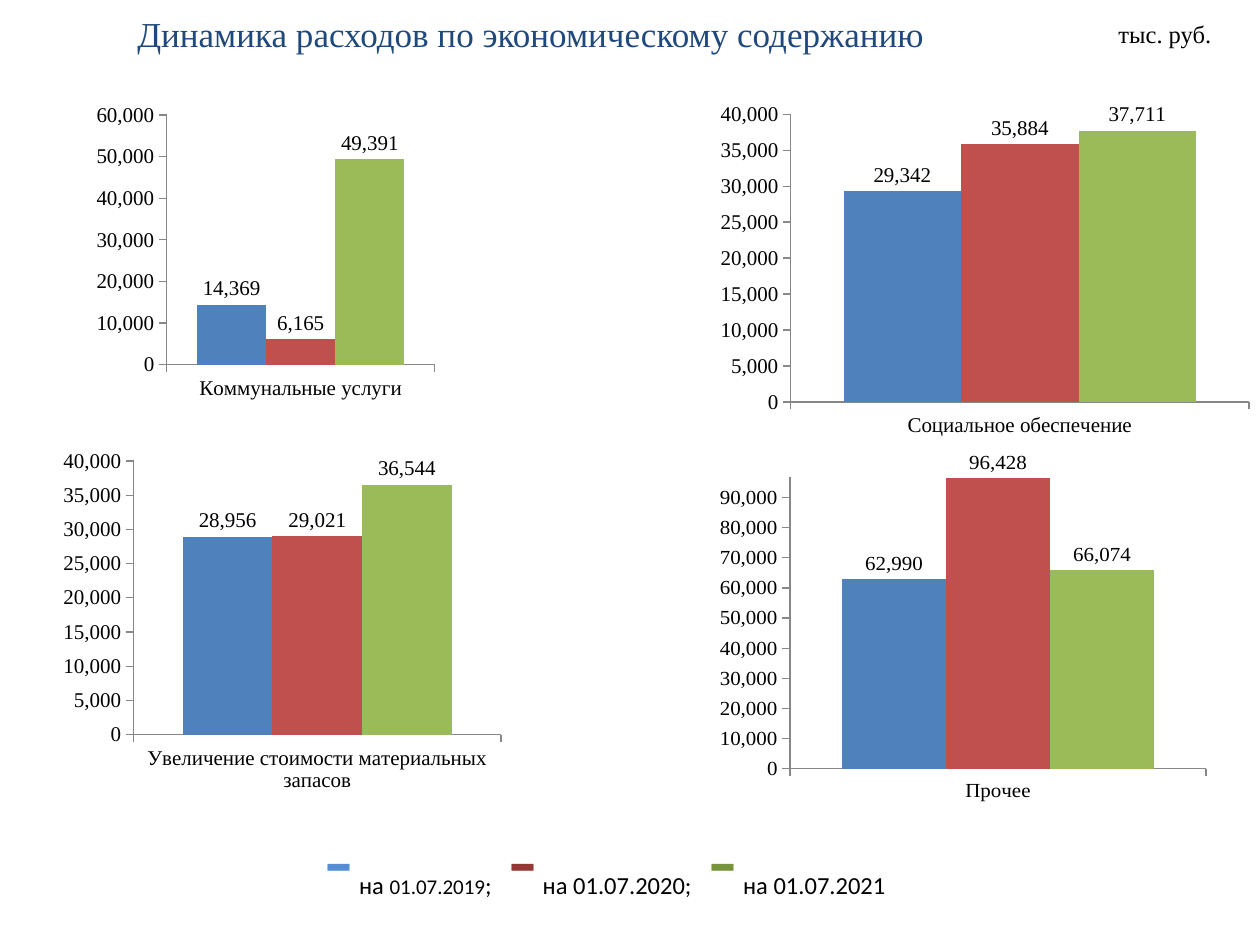
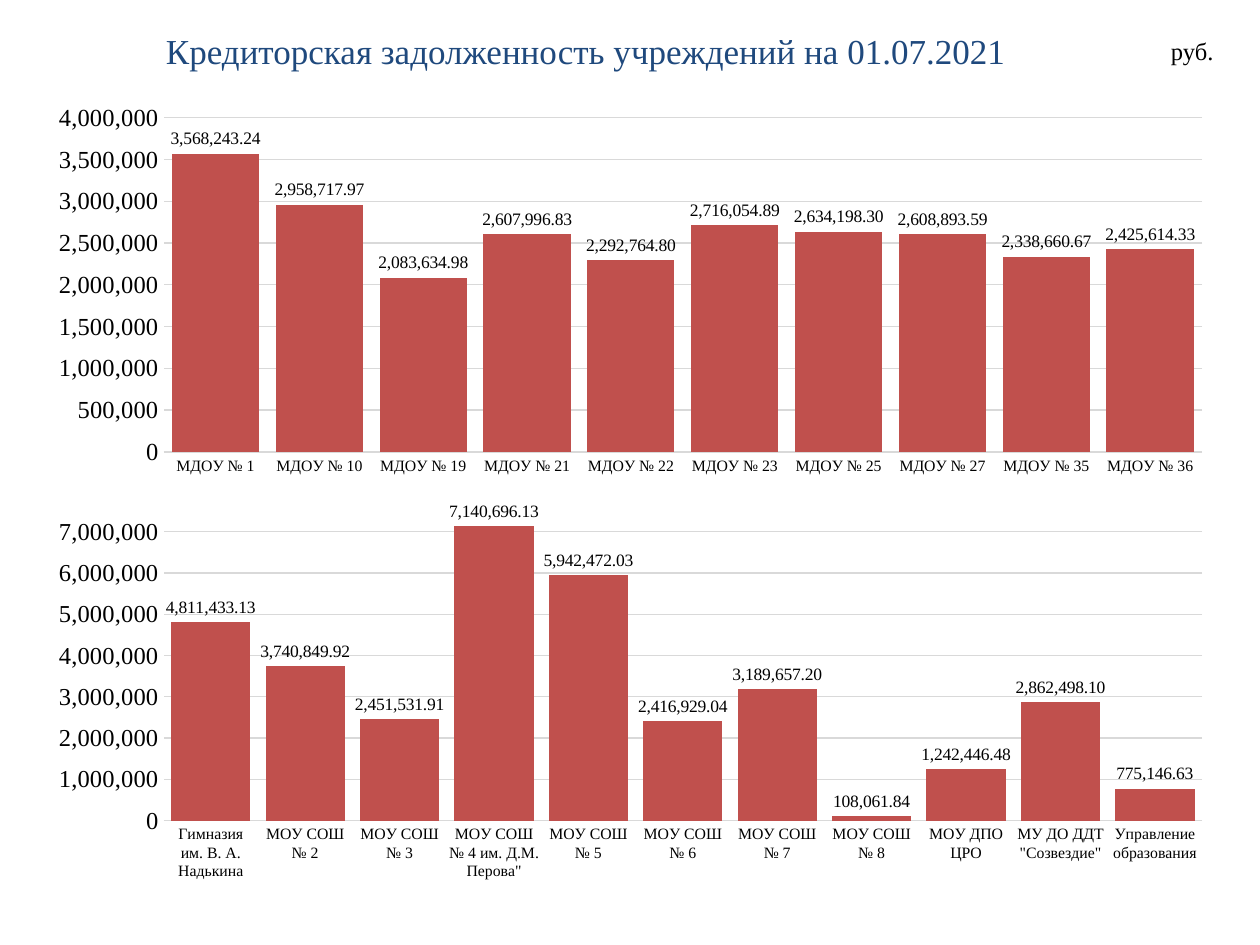
from dataclasses import dataclass
from lxml.etree import SubElement
from pptx import Presentation
from pptx.chart.data import CategoryChartData
from pptx.dml.color import RGBColor
from pptx.enum.chart import XL_CHART_TYPE, XL_LABEL_POSITION, XL_TICK_MARK
from pptx.enum.text import PP_ALIGN
from pptx.oxml.ns import qn
from pptx.util import Pt


@dataclass(frozen=True)
class Theme:
    """Colours, fonts and type sizes shared by the slides."""
    serif: str = "Times New Roman"
    sans: str = "Calibri"
    title: str = "1F497D"
    text: str = "000000"
    axis: str = "878787"
    grid: str = "D9D9D9"
    bars: tuple = ("4F81BD", "C0504D", "9BBB59")
    keys: tuple = ("558ED5", "953735", "77933C")
    title_size: float = 20
    unit_size: float = 14
    key_size: float = 54


@dataclass(frozen=True)
class ChartStyle:
    """Look of one family of column charts."""
    category_size: float
    value_size: float
    label_size: float
    label_format: str
    axis_color: str
    tick: XL_TICK_MARK
    overlap: int
    gridlines: bool


THEME = Theme()
COMPARISON = ChartStyle(12, 12, 12, "#,##0", THEME.axis, XL_TICK_MARK.OUTSIDE, 0, False)
RANKING = ChartStyle(9, 14, 10, "#,##0.00", THEME.grid, XL_TICK_MARK.NONE, -27, True)

DATES = ("на 01.07.2019", "на 01.07.2020", "на 01.07.2021")
EXPENSES = (
    ("Коммунальные услуги", (14369, 6165, 49391), (38, 54.5, 329, 181.5),
     (0.174, 0.062, 0.466, 0.786), 88, 60000, 10000),
    ("Социальное обеспечение", (29342, 35884, 37711), (405.5, 55, 314.5, 198.5),
     None, 90, 40000, 5000),
    ("Увеличение стоимости материальных запасов", (28956, 29021, 36544), (31, 253, 260.5, 203.5),
     None, 110, 40000, 5000),
    ("Прочее", (62990, 96428, 66074), (405.5, 258.5, 289.5, 203.5),
     None, 100, 97000, 10000),
)
KINDERGARTENS = {
    "МДОУ № 1": 3568243.24, "МДОУ № 10": 2958717.97, "МДОУ № 19": 2083634.98,
    "МДОУ № 21": 2607996.83, "МДОУ № 22": 2292764.80, "МДОУ № 23": 2716054.89,
    "МДОУ № 25": 2634198.30, "МДОУ № 27": 2608893.59, "МДОУ № 35": 2338660.67,
    "МДОУ № 36": 2425614.33,
}
SCHOOLS = {
    "Гимназия им. В. А. Надькина": 4811433.13, "МОУ СОШ № 2": 3740849.92,
    "МОУ СОШ № 3": 2451531.91, 'МОУ СОШ № 4 им. Д.М. Перова"': 7140696.13,
    "МОУ СОШ № 5": 5942472.03, "МОУ СОШ № 6": 2416929.04, "МОУ СОШ № 7": 3189657.20,
    "МОУ СОШ № 8": 108061.84, "МОУ ДПО ЦРО": 1242446.48,
    'МУ ДО ДДТ "Созвездие"': 2862498.10, "Управление образования": 775146.63,
}
DEBTS = (
    (KINDERGARTENS, 55, 4000000, 500000),
    (SCHOOLS, 286.5, 7500000, 1000000),
)


def set_font(font, size, color=THEME.text, name=THEME.serif):
    """Apply size, colour and typeface to a font."""
    font.size = Pt(size)
    font.name = name
    font.color.rgb = RGBColor.from_string(color)


def add_box(page, bounds):
    """Add a wrapping text box within the given bounds."""
    box = page.shapes.add_textbox(*map(Pt, bounds))
    box.text_frame.word_wrap = True
    return box


def add_caption(page, bounds, text, size, color, align):
    """Add a one-paragraph caption."""
    para = add_box(page, bounds).text_frame.paragraphs[0]
    para.text = text
    para.alignment = align
    set_font(para.runs[0].font, size, color)


def add_heading(page, title, title_bounds, unit, unit_bounds):
    """Add the slide title and the unit of measure."""
    add_caption(page, title_bounds, title, THEME.title_size, THEME.title, PP_ALIGN.CENTER)
    add_caption(page, unit_bounds, unit, THEME.unit_size, THEME.text, PP_ALIGN.LEFT)


def place_plot(chart, fractions):
    """Fix the inner plot area as fractions of the chart box."""
    plot_area = chart.plots[0]._element.getparent()
    layout = plot_area.find(qn("c:layout"))
    if layout is None:
        layout = SubElement(plot_area, qn("c:layout"))
        plot_area.insert(0, layout)
    manual = SubElement(layout, qn("c:manualLayout"))
    settings = [("layoutTarget", "inner"), ("xMode", "edge"), ("yMode", "edge")]
    settings += zip("xywh", fractions)
    for tag, value in settings:
        SubElement(manual, qn(f"c:{tag}")).set("val", str(value))


def style_axes(chart, style, top, step):
    """Format both axes and the gridlines, with level category labels that wrap."""
    category, value = chart.category_axis, chart.value_axis
    value.minimum_scale, value.maximum_scale, value.major_unit = 0, top, step
    value.has_major_gridlines = style.gridlines
    value.tick_labels.number_format = "#,##0"
    value.tick_labels.number_format_is_linked = False
    lines = [category.format.line]
    if style.gridlines:
        lines.append(value.major_gridlines.format.line)
        value.format.line.fill.background()
    else:
        lines.append(value.format.line)
    for line in lines:
        line.width = Pt(0.75)
        line.color.rgb = RGBColor.from_string(style.axis_color)
    for axis, size in ((category, style.category_size), (value, style.value_size)):
        axis.major_tick_mark = style.tick
        axis.minor_tick_mark = XL_TICK_MARK.NONE
        set_font(axis.tick_labels.font, size)
    body = category._element.find(qn("c:txPr")).find(qn("a:bodyPr"))
    body.set("rot", "0")
    body.set("vert", "horz")


def add_columns(page, bounds, categories, series, colors, style, gap, top, step, plot_box=None):
    """Add a labelled column chart within the given bounds."""
    data = CategoryChartData(number_format=style.label_format)
    data.categories = categories
    for name, values in series:
        data.add_series(name, values)
    frame = page.shapes.add_chart(XL_CHART_TYPE.COLUMN_CLUSTERED, *map(Pt, bounds), data)
    chart = frame.chart
    chart.has_legend = False
    chart.has_title = False
    set_font(chart.font, style.label_size, name=THEME.sans)
    plot = chart.plots[0]
    plot.vary_by_categories = False
    plot.gap_width, plot.overlap = gap, style.overlap
    for bars, color in zip(plot.series, colors):
        bars.format.fill.solid()
        bars.format.fill.fore_color.rgb = RGBColor.from_string(color)
        bars.invert_if_negative = False
        labels = bars.data_labels
        labels.show_value = True
        labels.position = XL_LABEL_POSITION.OUTSIDE_END
        labels.number_format = style.label_format
        labels.number_format_is_linked = False
        set_font(labels.font, style.label_size)
    style_axes(chart, style, top, step)
    if plot_box:
        place_plot(chart, plot_box)


def add_date_key(page, bounds):
    """Add the colour key for the three dates, spaced by tab stops."""
    frame = add_box(page, bounds).text_frame
    frame.margin_left = Pt(74.5)
    para = frame.paragraphs[0]
    stops = SubElement(para._p.get_or_add_pPr(), qn("a:tabLst"))
    for position in (105, 219.5):
        SubElement(stops, qn("a:tab"), pos=str(Pt(position)), algn="l")
    first, second, third = THEME.keys
    small, large = 14, THEME.key_size
    pieces = (
        ("-", large, first), (" на ", small, THEME.text), ("01.07.2019", 12, THEME.text),
        (";\t", small, THEME.text), ("-", large, second),
        (f" {DATES[1]};\t", small, THEME.text), ("-", large, third),
        (f" {DATES[2]}", small, THEME.text),
    )
    for text, size, color in pieces:
        span = para.add_run()
        span.text = text
        set_font(span.font, size, color, THEME.sans)


def build_expenses(page):
    """Compare four kinds of expense on three dates."""
    for name, values, bounds, plot_box, gap, top, step in EXPENSES:
        series = [(date, (value,)) for date, value in zip(DATES, values)]
        add_columns(page, bounds, [name], series, THEME.bars, COMPARISON,
                    gap, top, step, plot_box)
    add_heading(page, "Динамика расходов по экономическому содержанию",
                (20, 3.5, 566.5, 31.5), "тыс. руб.", (632, 7.5, 79, 24.5))
    add_date_key(page, (111, 453.5, 471, 72.5))


def build_debts(page):
    """Show the debt of each institution in two charts."""
    title = "Кредиторская задолженность учреждений на 01.07.2021"
    add_heading(page, title, (65.5, 13.5, 538.5, 31.5), "руб.", (662, 17, 43, 24.5))
    for debts, top_edge, top, step in DEBTS:
        add_columns(page, (20, top_edge, 680.5, 221), list(debts),
                    [("Кредиторская задолженность", list(debts.values()))],
                    THEME.bars[1:2], RANKING, 19, top, step)


def main():
    """Build and save the deck."""
    deck = Presentation()
    deck.slide_width, deck.slide_height = Pt(720), Pt(540)
    for build in (build_expenses, build_debts):
        build(deck.slides.add_slide(deck.slide_layouts[6]))
    deck.save("out.pptx")


if __name__ == "__main__":
    main()
